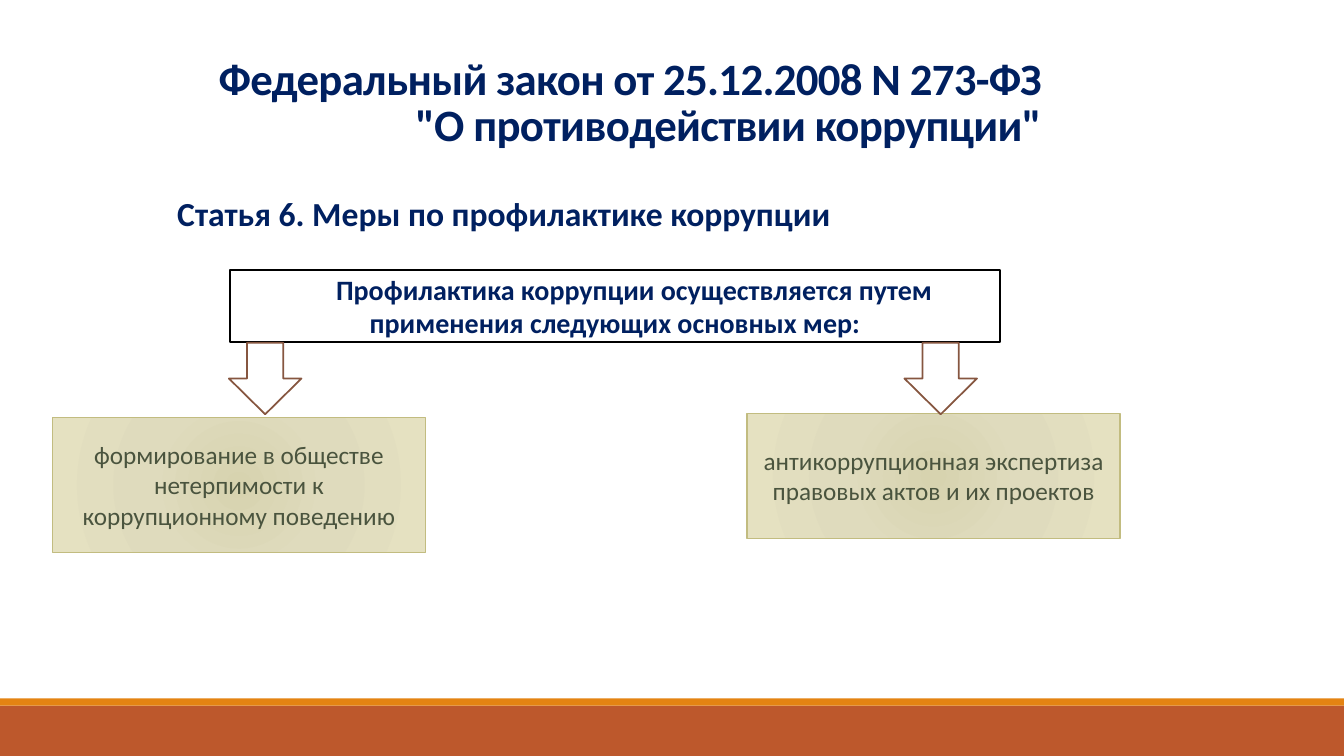
from dataclasses import dataclass

from lxml import etree
from pptx import Presentation
from pptx import util as u
from pptx.dml.color import RGBColor
from pptx.enum import shapes, text
from pptx.oxml.ns import qn


@dataclass(frozen=True)
class Theme:
    font: str = "Calibri"
    navy: str = "002060"
    olive_text: str = "4A543E"
    olive_line: str = "C2BC80"
    olive_stops: tuple = ((0, "D7D3AF"), (45, "DFDBBD"), (100, "E5E1C1"))
    white: str = "FFFFFF"
    black: str = "000000"
    arrow_line: str = "865640"
    rust: str = "BD582C"
    orange: str = "E48312"
    title_size: int = 32
    article_size: int = 24
    lead_size: int = 20
    measure_size: int = 18


THEME = Theme()
SLIDE_WIDTH, SLIDE_HEIGHT = 13.33, 7.5
MEASURES = (
    ("формирование в обществе нетерпимости к коррупционному поведению",
     (0.52, 4.14, 3.7, 1.34)),
    ("антикоррупционная экспертиза правовых актов и их проектов",
     (7.41, 4.1, 3.7, 1.24)),
)


def inches(box):
    return [u.Inches(value) for value in box]


def write(shape, words, size, color, bold=False,
          align=text.PP_ALIGN.CENTER, anchor=text.MSO_ANCHOR.MIDDLE):
    """Fill the shape with one formatted paragraph and return it."""
    frame = shape.text_frame
    frame.text = words
    frame.word_wrap = True
    frame.vertical_anchor = anchor
    paragraph = frame.paragraphs[0]
    paragraph.alignment = align
    for run in paragraph.runs:
        run.font.name = THEME.font
        run.font.size = u.Pt(size)
        run.font.bold = bold
        run.font.color.rgb = RGBColor.from_string(color)
    return paragraph


def add_block(slide, box, fill=None, line=None, line_width=1.25,
              kind=shapes.MSO_SHAPE.RECTANGLE):
    shape = slide.shapes.add_shape(kind, *inches(box))
    shape.shadow.inherit = False
    if fill:
        shape.fill.solid()
        shape.fill.fore_color.rgb = RGBColor.from_string(fill)
    if line:
        shape.line.color.rgb = RGBColor.from_string(line)
        shape.line.width = u.Pt(line_width)
    else:
        shape.line.fill.background()
    return shape


def fill_radially(shape, stops):
    shape.fill.gradient()
    gradient = shape.element.spPr.find(qn("a:gradFill"))
    gradient.clear()
    stop_list = etree.SubElement(gradient, qn("a:gsLst"))
    for percent, color in stops:
        stop = etree.SubElement(stop_list, qn("a:gs"), pos=str(percent * 1000))
        etree.SubElement(stop, qn("a:srgbClr"), val=color)
    circle = etree.SubElement(gradient, qn("a:path"), path="circle")
    etree.SubElement(circle, qn("a:fillToRect"),
                     {side: "100000" for side in "ltrb"})


def add_footer(slide, box):
    left, top, width, height = box
    stripe = 0.07
    add_block(slide, (left, top + stripe, width, height - stripe), THEME.rust)
    add_block(slide, (left, top, width, stripe), THEME.orange)


def add_title(slide, box):
    title = slide.shapes.add_textbox(*inches(box))
    title.text_frame.margin_right = u.Inches(0.65)
    paragraph = write(
        title, "Федеральный закон от 25.12.2008 N 273-ФЗ\v\"О противодействии коррупции\"",
        THEME.title_size, THEME.navy, True,
        text.PP_ALIGN.RIGHT, text.MSO_ANCHOR.TOP)
    paragraph.line_spacing = 0.85
    for run in paragraph.runs:
        run.font.element.set("spc", "-50") if hasattr(run.font, "element") \
            else run._r.get_or_add_rPr().set("spc", "-50")


def add_article(slide, box):
    article = slide.shapes.add_textbox(*inches(box))
    paragraph = write(article, "Статья 6. Меры по профилактике коррупции",
                      THEME.article_size, THEME.navy, True,
                      text.PP_ALIGN.LEFT, text.MSO_ANCHOR.TOP)
    paragraph.line_spacing = 0.9


def add_lead(slide, box):
    """Add the framed statement with an arrow below each of its ends."""
    left, top, width, height = box
    lead = add_block(slide, box, THEME.white, THEME.black)
    paragraph = write(
        lead, "Профилактика коррупции осуществляется путем применения следующих основных мер:",
        THEME.lead_size, THEME.navy, True)
    paragraph._p.get_or_add_pPr().set("indent", str(u.Inches(0.38)))
    for offset in (-0.01, 6.69):
        add_block(slide, (left + offset, top + height + 0.01, 0.72, 0.71),
                  THEME.white, THEME.arrow_line,
                  kind=shapes.MSO_SHAPE.DOWN_ARROW)


def add_measure(slide, box, words):
    measure = add_block(slide, box, line=THEME.olive_line, line_width=1)
    fill_radially(measure, THEME.olive_stops)
    write(measure, words, THEME.measure_size, THEME.olive_text)


def main():
    presentation = Presentation()
    presentation.slide_width = u.Inches(SLIDE_WIDTH)
    presentation.slide_height = u.Inches(SLIDE_HEIGHT)
    slide = presentation.slides.add_slide(presentation.slide_layouts[6])
    add_footer(slide, (0, 6.93, SLIDE_WIDTH, 0.57))
    add_title(slide, (1.98, 0.54, 9, 0.94))
    add_article(slide, (1.66, 1.91, 9, 0.6))
    for words, box in MEASURES:
        add_measure(slide, box, words)
    add_lead(slide, (2.28, 2.68, 7.64, 0.71))
    presentation.save("out.pptx")


if __name__ == "__main__":
    main()
